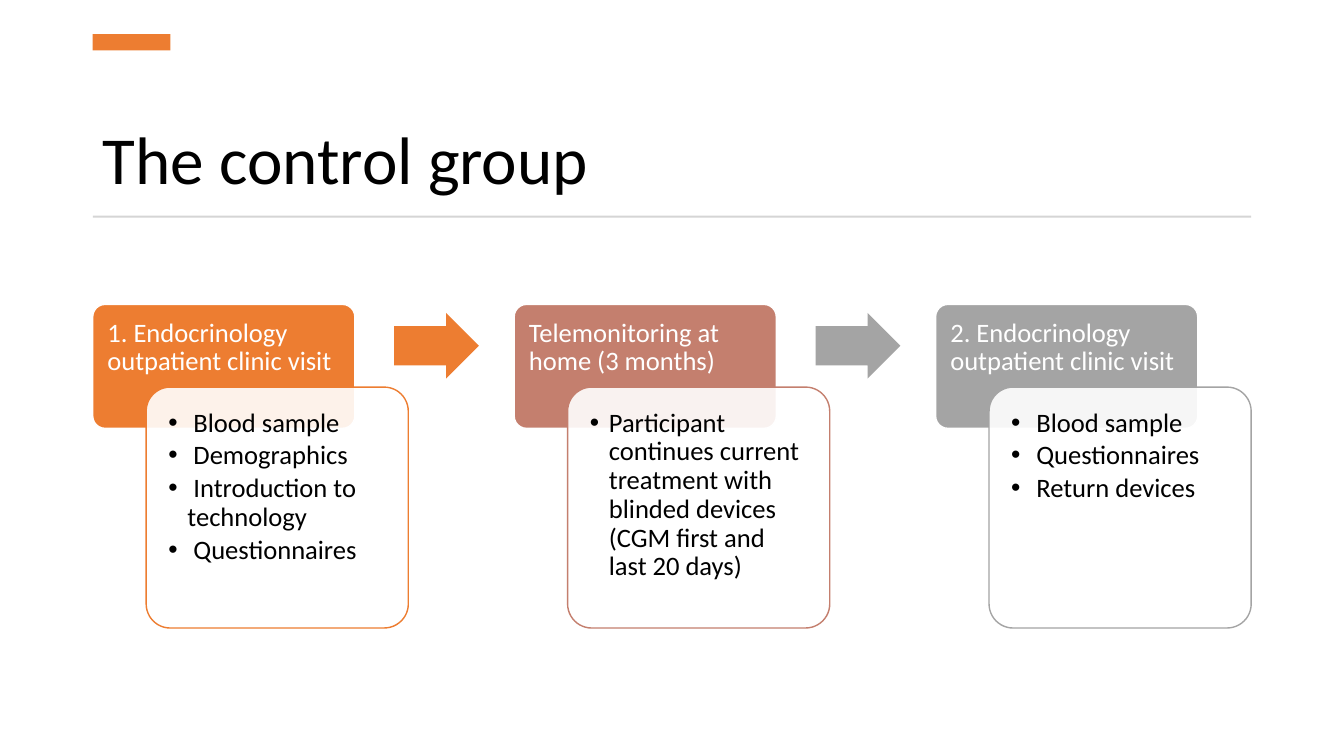
from lxml import etree
from pptx import Presentation
from pptx.dml.color import RGBColor
from pptx.enum.shapes import MSO_SHAPE
from pptx.enum.text import MSO_ANCHOR, PP_ALIGN
from pptx.oxml.ns import qn
from pptx.util import Inches, Pt

RECT, ROUNDED, ARROW = MSO_SHAPE.RECTANGLE, MSO_SHAPE.ROUNDED_RECTANGLE, MSO_SHAPE.RIGHT_ARROW
TOP, BOTTOM, LEFT_ALIGN = MSO_ANCHOR.TOP, MSO_ANCHOR.BOTTOM, PP_ALIGN.LEFT

WHITE = RGBColor(0xFF, 0xFF, 0xFF)
BLACK = RGBColor(0x00, 0x00, 0x00)
ORANGE = RGBColor(0xED, 0x7D, 0x31)
ROSE = RGBColor(0xC4, 0x7F, 0x6E)
GRAY = RGBColor(0xA4, 0xA4, 0xA4)
RULE_GRAY = RGBColor(0xD5, 0xD5, 0xD5)

TITLE = "The control group"
STEPS = [
    ("1. Endocrinology outpatient clinic visit", ORANGE,
     [" Blood sample", " Demographics", " Introduction to technology", " Questionnaires"]),
    ("Telemonitoring at home (3 months)", ROSE,
     ["Participant continues current treatment with blinded devices "
      "(CGM first and last 20 days)"]),
    ("2. Endocrinology outpatient clinic visit", GRAY,
     [" Blood sample", " Questionnaires", " Return devices"]),
]
ARROW_COLORS = [ORANGE, GRAY]

FONT = "Calibri"
TITLE_SIZE, STEP_SIZE = 48, 19
MARGIN, CONTENT_W = 0.92, 11.49
CARD_W, HEADER_H, DETAIL_H = 2.6, 1.23, 2.39
DETAIL_DX, DETAIL_DY = 0.53, 0.82
STEP_TOP = 3.02
STEP_PITCH = (CONTENT_W - DETAIL_DX - CARD_W) / (len(STEPS) - 1)
ARROW_DX, ARROW_W, ARROW_H = 2.99, 0.84, 0.65
BULLET_INDENT = 0.19

prs = Presentation()
prs.slide_width, prs.slide_height = Inches(13.33), Inches(7.5)
slide = prs.slides.add_slide(prs.slide_layouts[6])


def add_shape(kind, x, y, w, h, fill, line=None, adjustments=()):
    s = slide.shapes.add_shape(kind, Inches(x), Inches(y), Inches(w), Inches(h))
    s.shadow.inherit = False
    s.fill.solid()
    s.fill.fore_color.rgb = fill
    if line is None:
        s.line.fill.background()
    else:
        s.line.color.rgb = line
        s.line.width = Pt(1)
    for i, value in enumerate(adjustments):
        s.adjustments[i] = value
    return s


def set_text(s, lines, size, color, insets, anchor=TOP):
    """Fill a shape with left-aligned lines; insets are left, top, right, bottom."""
    tf = s.text_frame
    tf.word_wrap = True
    tf.vertical_anchor = anchor
    tf.margin_left, tf.margin_top, tf.margin_right, tf.margin_bottom = map(Inches, insets)
    tf.text = "\n".join(lines)
    for p in tf.paragraphs:
        p.alignment = LEFT_ALIGN
        p.line_spacing = 0.9
        p.font.name = FONT
        p.font.size = Pt(size)
        r = p.runs[0]
        r.font.name = FONT
        r.font.size = Pt(size)
        r.font.color.rgb = color


def add_bullets(s):
    for i, p in enumerate(s.text_frame.paragraphs):
        p.space_before = Pt(2.9 if i else 0)
        props = p._p.get_or_add_pPr()
        props.set("marL", str(Inches(BULLET_INDENT)))
        props.set("indent", str(-Inches(BULLET_INDENT)))
        etree.SubElement(props, qn("a:buFont"), typeface="Arial")
        etree.SubElement(props, qn("a:buChar"), char="•")
        # The schema wants default run properties after the bullet.
        props.append(props.find(qn("a:defRPr")))


def set_opacity(s, percent):
    color = s.fill._xPr.find(qn("a:solidFill"))[0]
    etree.SubElement(color, qn("a:alpha"), val=str(percent * 1000))


title = slide.shapes.add_textbox(Inches(MARGIN), Inches(0.75), Inches(CONTENT_W), Inches(1.27))
set_text(title, [TITLE], TITLE_SIZE, BLACK, (0.1, 0.05, 0.1, 0.05), BOTTOM)
add_shape(RECT, MARGIN, 0.34, 0.77, 0.16, ORANGE)
add_shape(RECT, MARGIN, 2.14, CONTENT_W, 0.02, RULE_GRAY)

for i, (heading, color, details) in enumerate(STEPS):
    x = MARGIN + i * STEP_PITCH
    header = add_shape(ROUNDED, x, STEP_TOP, CARD_W, HEADER_H, color, WHITE, [0.1])
    set_text(header, [heading], STEP_SIZE, WHITE, (0.11, 0.11, 0.11, 0.05))

    detail = add_shape(ROUNDED, x + DETAIL_DX, STEP_TOP + DETAIL_DY, CARD_W, DETAIL_H,
                       WHITE, color, [0.1])
    set_opacity(detail, 90)
    set_text(detail, details, STEP_SIZE, BLACK, (0.15,) * 4)
    add_bullets(detail)

    if i < len(ARROW_COLORS):
        add_shape(ARROW, x + ARROW_DX, STEP_TOP + (DETAIL_DY - ARROW_H) / 2,
                  ARROW_W, ARROW_H, ARROW_COLORS[i], adjustments=[0.6, 0.5])

prs.save("out.pptx")
